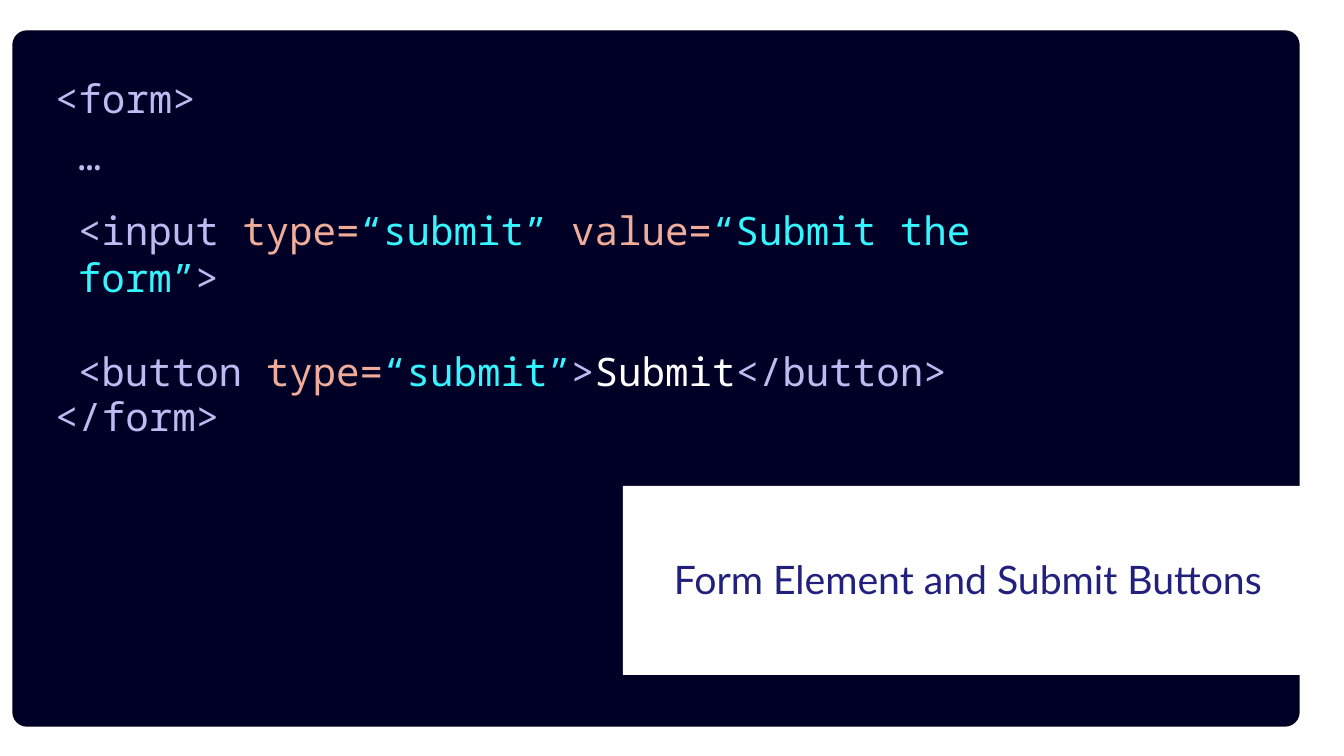
from pptx import Presentation
from pptx.dml.color import RGBColor
from pptx.enum.shapes import MSO_SHAPE as SHAPE
from pptx.enum.text import MSO_ANCHOR as ANCHOR, MSO_AUTO_SIZE as FIT, PP_ALIGN as ALIGN
from pptx.util import Emu, Pt

SCALE = 914400 / 100.8
CODE_FONT, TITLE_FONT = "Noto Sans Mono", "Lato"
SIZE = Pt(28)
COLORS = {
    "panel": "000026",
    "edge": "00001C",
    "tag": "BDBBF1",
    "attr": "EFAC9B",
    "value": "35F5FF",
    "white": "FFFFFF",
    "title": "21207F",
}
INPUT_LINE = [
    ("<input ", "tag"), ("type=", "attr"), ("“submit” ", "value"),
    ("value=", "attr"), ("“Submit the form”", "value"), (">", "tag"),
]
BUTTON_LINE = [
    ("<button ", "tag"), ("type=", "attr"), ("“submit”", "value"),
    (">", "tag"), ("Submit", "white"), ("</button>", "tag"),
]
CODE_BOXES = [
    ((68, 201, 1012, 201), [INPUT_LINE, BUTTON_LINE]),
    ((45, 69, 293, 57), [[("<form>", "tag")]]),
    ((45, 387, 293, 57), [[("</form>", "tag")]]),
    ((68, 126, 293, 57), [[("…", "tag")]]),
]


def px(n):
    """Turn pixels into EMU."""
    return Emu(round(n * SCALE))


def color(name):
    """Look up a named colour."""
    return RGBColor.from_string(COLORS[name])


def add_block(s, kind, box, fill):
    """Add a filled shape without line or shadow."""
    sp = s.shapes.add_shape(kind, *map(px, box))
    sp.shadow.inherit = False
    sp.fill.solid()
    sp.fill.fore_color.rgb = color(fill)
    sp.line.fill.background()
    return sp


def add_panel(s):
    """Add the dark rounded code panel."""
    sp = add_block(s, SHAPE.ROUNDED_RECTANGLE, (13, 31, 1286, 695), "panel")
    sp.adjustments[0] = 0.02
    sp.line.color.rgb = color("edge")
    sp.line.width = Pt(1)


def add_code(s, box, lines):
    """Add coloured code lines, set one line apart."""
    tf = s.shapes.add_textbox(*map(px, box)).text_frame
    tf.word_wrap = True
    tf.auto_size = FIT.SHAPE_TO_FIT_TEXT
    for i, line in enumerate(lines):
        p = tf.add_paragraph() if i else tf.paragraphs[0]
        p.font.name, p.font.size = CODE_FONT, SIZE
        if i:
            p.space_before = Pt(33.6)
        for text, name in line:
            r = p.add_run()
            r.text = text
            r.font.color.rgb = color(name)


def add_title(s, text):
    """Add the white title block."""
    sp = add_block(s, SHAPE.RECTANGLE, (623, 486, 721, 189), "white")
    tf = sp.text_frame
    tf.word_wrap = True
    tf.vertical_anchor = ANCHOR.MIDDLE
    tf.margin_left, tf.margin_top = px(51), 0
    tf.margin_right, tf.margin_bottom = px(16), px(4)
    p = tf.paragraphs[0]
    p.text = text
    p.alignment = ALIGN.LEFT
    p.font.name, p.font.size = TITLE_FONT, SIZE
    p.font.color.rgb = color("title")


def main():
    """Build and save the slide."""
    prs = Presentation()
    prs.slide_width, prs.slide_height = px(1344), px(756)
    s = prs.slides.add_slide(prs.slide_layouts[6])
    add_panel(s)
    for box, lines in CODE_BOXES:
        add_code(s, box, lines)
    add_title(s, "Form Element and Submit Buttons")
    prs.save("out.pptx")


if __name__ == "__main__":
    main()
